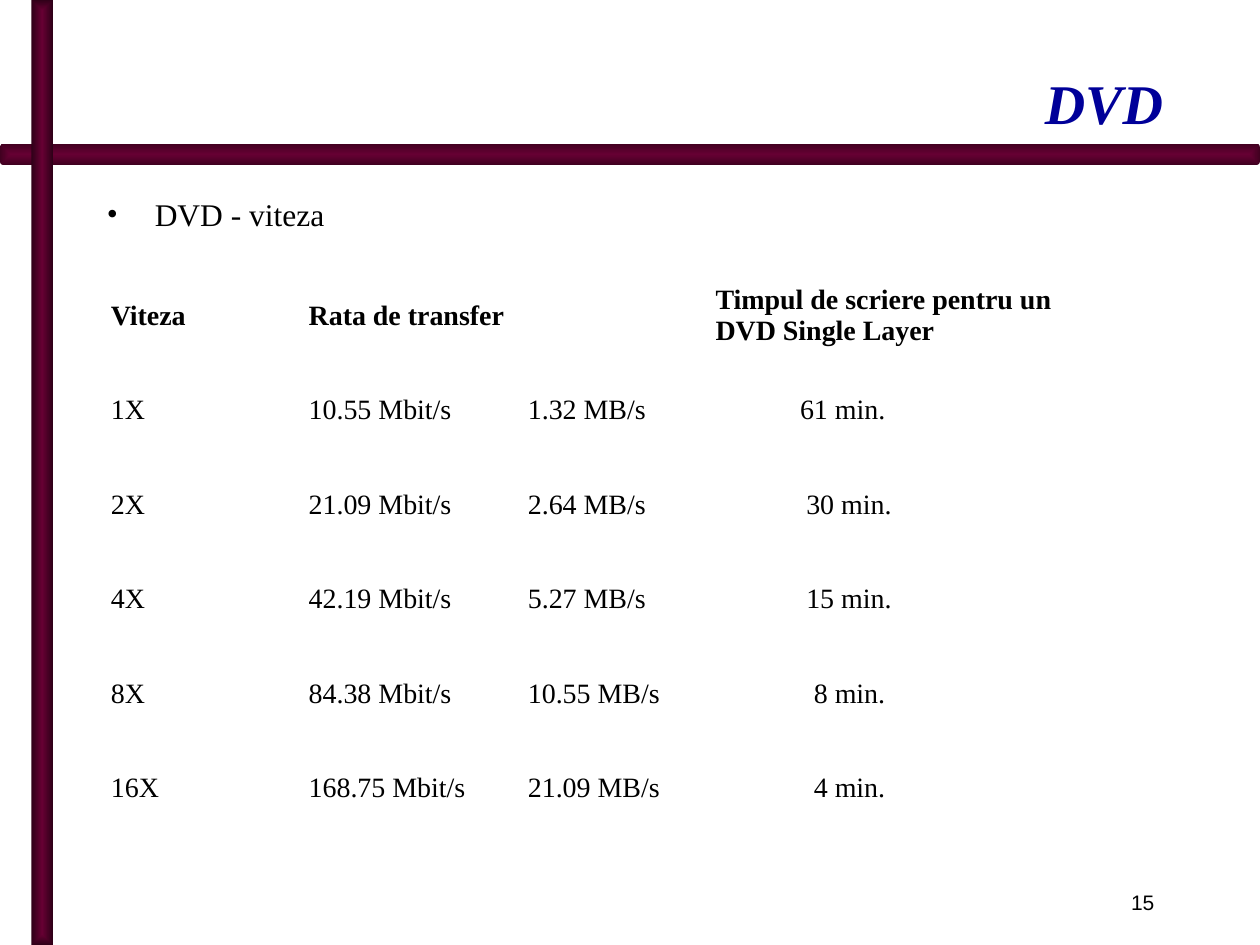
import pptx
import pptx.util
import pptx.dml.color
import pptx.enum.shapes
import pptx.enum.text
import pptx.oxml.ns
import lxml.etree

SHAPE = pptx.enum.shapes.MSO_SHAPE
ALIGN = pptx.enum.text.PP_ALIGN
ANCHOR = pptx.enum.text.MSO_ANCHOR
SERIF = "Times New Roman"


def tint(code):
    return pptx.dml.color.RGBColor.from_string(code)


def sub(node, tag, **attrs):
    return lxml.etree.SubElement(node, pptx.oxml.ns.qn(tag), **attrs)


def write(frame, text, size=16, font=SERIF, color="000000", bold=False,
          slant=False, align=ALIGN.LEFT, indent=0, bullet=None):
    """Fill a text frame, one paragraph for each line of text."""
    for i, line in enumerate(text.split("\n")):
        para = frame.add_paragraph() if i else frame.paragraphs[0]
        para.alignment = align
        props = para._p.get_or_add_pPr()
        props.set("marL", str(pptx.util.Inches(indent)))
        if bullet:
            props.set("indent", str(-pptx.util.Inches(indent)))
            sub(props, "a:buFont", typeface=font)
            sub(props, "a:buChar", char=bullet)
        run = para.add_run()
        run.text = line
        run.font.size = pptx.util.Pt(size)
        run.font.name = font
        run.font.bold = bold
        run.font.italic = slant
        run.font.color.rgb = tint(color)


class Deck:
    """Holds the style and the current slide; lengths are percent of the slide."""
    wine = "660033"
    navy = "000099"

    def __init__(self):
        self.show = pptx.Presentation()
        self.show.slide_width = pptx.util.Inches(10)
        self.show.slide_height = pptx.util.Inches(7.5)
        self.slide = self.show.slides.add_slide(self.show.slide_layouts[6])

    def wide(self, share):
        return round(self.show.slide_width * share / 100)

    def high(self, share):
        return round(self.show.slide_height * share / 100)

    def area(self, x, y, w, h):
        return self.wide(x), self.high(y), self.wide(w), self.high(h)

    def bar(self, kind, box, edge):
        shape = self.slide.shapes.add_shape(kind, *self.area(*box))
        shape.shadow.inherit = False
        shape.line.fill.background()
        shape.fill.gradient()
        for stop, code in zip(shape.fill.gradient_stops, (self.wine, edge)):
            stop.color.rgb = tint(code)
        # Let the colour run from the centre to the edges
        grad = shape._element.spPr.find(pptx.oxml.ns.qn("a:gradFill"))
        grad.remove(grad.find(pptx.oxml.ns.qn("a:lin")))
        centre = sub(grad, "a:path", path="shape")
        sub(centre, "a:fillToRect", l="50000", t="50000", r="50000", b="50000")
        return shape

    def text(self, text, box, anchor=ANCHOR.TOP, **form):
        frame = self.slide.shapes.add_textbox(*self.area(*box)).text_frame
        frame.word_wrap = True
        frame.vertical_anchor = anchor
        write(frame, text, **form)

    def table(self, rows, widths, box, insets):
        grid = self.slide.shapes.add_table(
            len(rows), len(widths), *self.area(*box)).table
        grid.first_row = grid.horz_banding = False
        for col, width in zip(grid.columns, widths):
            col.width = self.wide(width)
        grid.cell(0, 1).merge(grid.cell(0, 2))
        for r, row in enumerate(rows):
            for c, text in enumerate(row):
                cell = grid.cell(r, c)
                cell.fill.background()
                cell.vertical_anchor = ANCHOR.MIDDLE
                if text:
                    last = c == len(row) - 1
                    write(cell.text_frame, text, bold=r == 0,
                          indent=insets[r] if last else 0)


def main():
    deck = Deck()

    # Crossed bars
    beam = deck.bar(SHAPE.ROUNDED_RECTANGLE, (0, 15.2, 100, 2.27), "410020")
    beam.adjustments[0] = 0.17
    deck.bar(SHAPE.RECTANGLE, (2.5, 0, 1.7, 100), "2F0018")

    # Page number, title and lead line
    deck.text("15", (7.5, 93.47, 85.1, 4), size=12, font="Arial",
              align=ALIGN.RIGHT)
    deck.text("DVD", (8.3, 2.27, 85, 12.8), anchor=ANCHOR.BOTTOM, size=32,
              color=deck.navy, bold=True, slant=True, align=ALIGN.RIGHT)
    deck.text("DVD - viteza", (7.5, 20, 38.5, 7.6), size=18,
              indent=0.38, bullet="•")

    # Speed table
    rows = [
        ("Viteza", "Rata de transfer", "",
         "Timpul de scriere pentru un\nDVD Single Layer"),
        ("1X", "10.55 Mbit/s", "1.32 MB/s", "61 min."),
        ("2X", "21.09 Mbit/s", "2.64 MB/s", "30 min."),
        ("4X", "42.19 Mbit/s", "5.27 MB/s", "15 min."),
        ("8X", "84.38 Mbit/s", "10.55 MB/s", "8 min."),
        ("16X", "168.75 Mbit/s", "21.09 MB/s", "4 min."),
    ]
    deck.table(rows, (15.7, 17.4, 14.9, 41.5), (7.8, 28.4, 89.5, 60),
               insets=(0, 0.67, 0.72, 0.72, 0.78, 0.78))

    deck.show.save("out.pptx")


if __name__ == "__main__":
    main()
